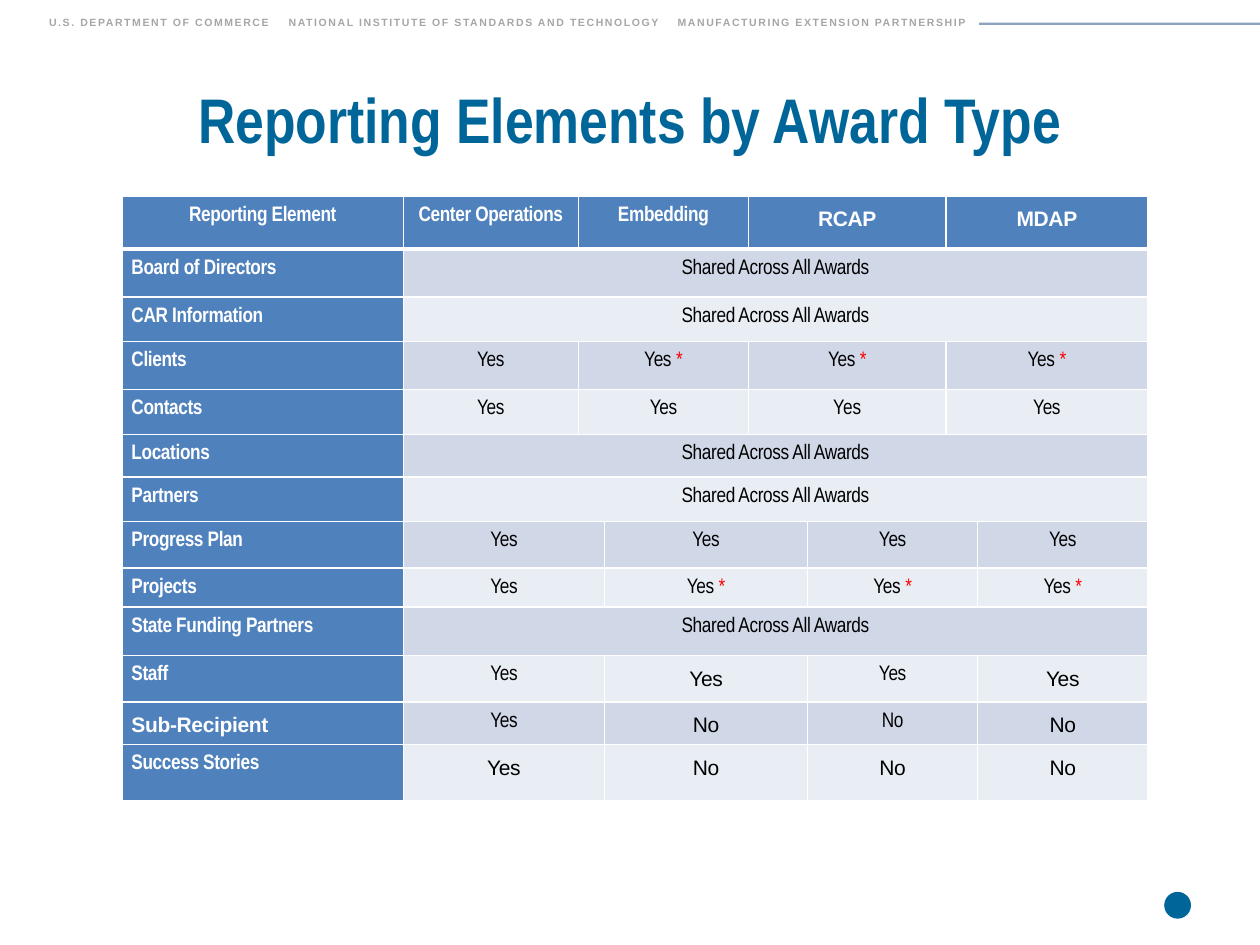
import dataclasses
import typing

import pptx
import pptx.dml.color
import pptx.enum.shapes
import pptx.enum.text
import pptx.oxml
import pptx.oxml.ns
import pptx.util

Cm = pptx.util.Cm
Pt = pptx.util.Pt
ALIGN = pptx.enum.text.PP_ALIGN
ANCHOR = pptx.enum.text.MSO_ANCHOR


@dataclasses.dataclass(frozen=True)
class Theme:
    font: str = "Arial"
    narrow: str = "Arial Narrow"
    title: str = "006699"
    rule: str = "1F497D"
    banner: str = "A6A6A6"
    head: str = "4F81BD"
    bands: tuple[str, str] = ("D0D8E8", "E9EDF4")
    white: str = "FFFFFF"
    black: str = "000000"
    mark: str = "FF0000"
    banner_size: float = 6
    title_size: float = 36
    table_size: float = 12


@dataclasses.dataclass(frozen=True)
class Row:
    height: float
    label: str
    values: tuple[str, ...]
    starts: tuple[int, ...]
    wide: tuple[int, ...] = ()
    loose: tuple[int, ...] = ()


T = Theme()
UPPER = (1, 2, 4, 6)
LOWER = (1, 3, 5, 7)
MERGED = (1,)
SHARED = ("Shared Across All Awards",)
YES = ("Yes",) * 4
STARRED = ("Yes",) + ("Yes *",) * 3
YES_NO = ("Yes",) + ("No",) * 3

COLS = (5.66, 3.53, 0.53, 2.9, 1.19, 2.79, 0.64, 3.43)
ROWS = (
    Row(1.07, "Reporting Element", ("Center Operations", "Embedding", "RCAP", "MDAP"), UPPER, wide=(3, 4)),
    Row(0.97, "Board of Directors", SHARED, MERGED),
    Row(0.89, "CAR Information", SHARED, MERGED),
    Row(0.97, "Clients", STARRED, UPPER),
    Row(0.91, "Contacts", YES, UPPER, loose=(3,)),
    Row(0.86, "Locations", SHARED, MERGED),
    Row(0.89, "Partners", SHARED, MERGED),
    Row(0.94, "Progress Plan", YES, LOWER),
    Row(0.79, "Projects", STARRED, LOWER),
    Row(0.97, "State Funding Partners", SHARED, MERGED),
    Row(0.94, "Staff", YES, LOWER, wide=(2, 4)),
    Row(0.86, "Sub-Recipient", YES_NO, LOWER, wide=(0, 2, 4)),
    Row(1.14, "Success Stories", YES_NO, LOWER, wide=(1, 2, 3, 4)),
)


def rgb(color: str) -> pptx.dml.color.RGBColor:
    return pptx.dml.color.RGBColor.from_string(color)


def apply(obj: typing.Any, fmt: dict[str, typing.Any]) -> None:
    for name, value in fmt.items():
        setattr(obj, name, value)


def add_run(p: typing.Any, text: str, color: str, spacing: float = 0, **fmt: typing.Any) -> None:
    r = p.add_run()
    r.text = text
    apply(r.font, fmt)
    r.font.color.rgb = rgb(color)
    r.font._element.set("spc", str(round(spacing * 100)))


def add_text(s: typing.Any, box: tuple[float, ...], **fmt: typing.Any) -> typing.Any:
    tf = s.shapes.add_textbox(*map(Cm, box)).text_frame
    apply(tf, {"word_wrap": True, **fmt})
    return tf.paragraphs[0]


def set_tabs(p: typing.Any, stops: tuple[float, ...]) -> None:
    tabs = pptx.oxml.parse_xml(f"<a:tabLst {pptx.oxml.ns.nsdecls('a')}/>")
    for stop in stops:
        tabs.append(pptx.oxml.parse_xml(
            f'<a:tab {pptx.oxml.ns.nsdecls("a")} pos="{Cm(stop)}" algn="l"/>'))
    p._p.get_or_add_pPr().append(tabs)


def add_rule(s: typing.Any, left: float, right: float, top: float) -> None:
    sp = s.shapes.add_connector(
        pptx.enum.shapes.MSO_CONNECTOR.STRAIGHT, Cm(left), Cm(top), Cm(right), Cm(top))
    sp.line.width = Pt(1.25)
    sp.line.color.rgb = rgb(T.rule)
    ns = pptx.oxml.ns.nsdecls("a")
    clr = sp._element.spPr.find(".//" + pptx.oxml.ns.qn("a:srgbClr"))
    clr.append(pptx.oxml.parse_xml(f'<a:alpha {ns} val="50000"/>'))
    sp._element.spPr.append(pptx.oxml.parse_xml(f"<a:effectLst {ns}/>"))


def add_dot(s: typing.Any, left: float, top: float, size: float) -> None:
    sp = s.shapes.add_shape(
        pptx.enum.shapes.MSO_SHAPE.OVAL, Cm(left), Cm(top), Cm(size), Cm(size))
    sp.shadow.inherit = False
    sp.fill.solid()
    sp.fill.fore_color.rgb = rgb(T.title)
    sp.line.fill.background()


def style_cell(cell: typing.Any, fill: str, top: float, bottom: float) -> None:
    apply(cell, {"margin_left": Cm(0.18), "margin_right": Cm(0.18), "margin_top": 0, "margin_bottom": 0})
    tcPr = cell._tc.get_or_add_tcPr()
    for side, width in {"L": 1, "R": 1, "T": top, "B": bottom}.items():
        tcPr.append(pptx.oxml.parse_xml(
            f'<a:ln{side} {pptx.oxml.ns.nsdecls("a")} w="{Pt(width)}"><a:solidFill>'
            f'<a:srgbClr val="{T.white}"/></a:solidFill></a:ln{side}>'))
    cell.fill.solid()
    cell.fill.fore_color.rgb = rgb(fill)


def write_cell(cell: typing.Any, text: str, heading: bool, centred: bool, wide: bool, loose: bool) -> None:
    p = cell.text_frame.paragraphs[0]
    apply(p, {"alignment": ALIGN.CENTER if centred else ALIGN.LEFT, "line_spacing": 1.5})
    fmt = {
        "name": T.font if wide else T.narrow,
        "size": Pt(T.table_size),
        "bold": heading,
        "spacing": 0 if loose else -0.2,
    }
    body = text.removesuffix("*")
    add_run(p, body, T.white if heading else T.black, **fmt)
    if body != text:
        add_run(p, "*", T.mark, **fmt)


def add_awards_table(s: typing.Any, left: float, top: float) -> None:
    height = sum(row.height for row in ROWS)
    table = s.shapes.add_table(
        len(ROWS), len(COLS), Cm(left), Cm(top), Cm(sum(COLS)), Cm(height)).table
    apply(table, {"first_row": False, "horz_banding": False})
    for col, width in zip(table.columns, COLS):
        col.width = Cm(width)
    for i, row in enumerate(ROWS):
        table.rows[i].height = Cm(row.height)
        for j in range(len(COLS)):
            fill = T.head if i == 0 or j == 0 else T.bands[(i - 1) % 2]
            style_cell(table.cell(i, j), fill, 3 if i == 1 else 1, 3 if i == 0 else 1)
        starts = (0, *row.starts)
        ends = (*row.starts, len(COLS))
        for k, (start, end, text) in enumerate(zip(starts, ends, (row.label, *row.values))):
            cell = table.cell(i, start)
            if end - start > 1:
                cell.merge(table.cell(i, end - 1))
            write_cell(cell, text, i == 0 or k == 0, i == 0 or k > 0, k in row.wide, k in row.loose)


def main() -> None:
    prs = pptx.Presentation()
    apply(prs, {"slide_width": Cm(25.4), "slide_height": Cm(19.05)})
    s = prs.slides.add_slide(prs.slide_layouts[6])

    add_rule(s, 19.74, 25.4, 0.48)
    p = add_text(s, (0.74, 0.2, 20.07, 0.51), vertical_anchor=ANCHOR.TOP)
    set_tabs(p, (4.83, 12.67))
    add_run(
        p,
        "U.S. DEPARTMENT OF COMMERCE\tNATIONAL INSTITUTE OF STANDARDS AND TECHNOLOGY"
        "\tMANUFACTURING EXTENSION PARTNERSHIP",
        T.banner, spacing=0.9, name=T.font, size=Pt(T.banner_size), bold=True)
    add_dot(s, 23.47, 17.98, 0.54)

    p = add_text(s, (1.27, 1.4, 22.86, 1.96), vertical_anchor=ANCHOR.MIDDLE)
    p.alignment = ALIGN.CENTER
    add_run(p, "Reporting Elements by Award Type", T.title,
            name=T.narrow, size=Pt(T.title_size), bold=True)

    add_awards_table(s, 2.47, 3.95)
    prs.save("out.pptx")


if __name__ == "__main__":
    main()
